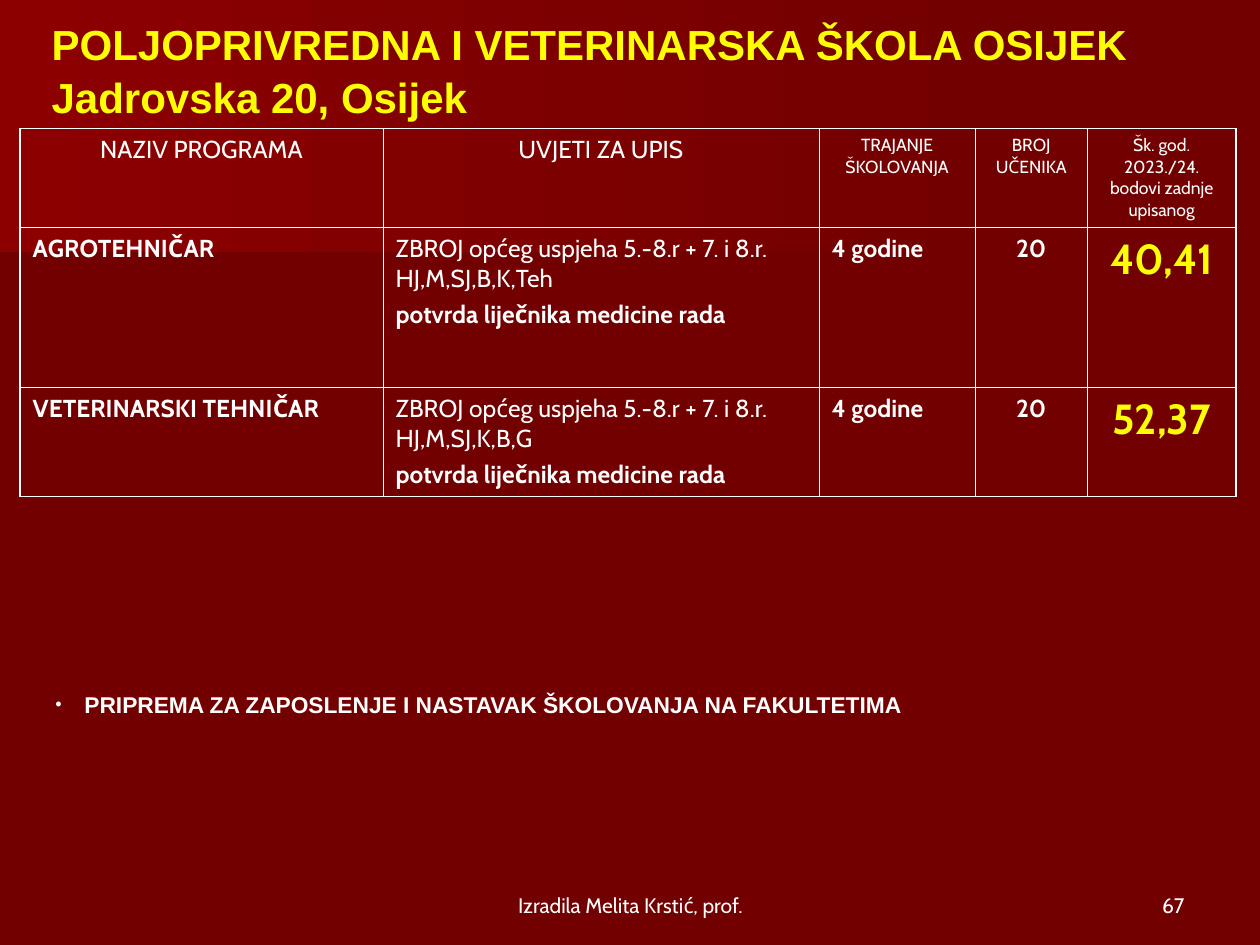
from copy import deepcopy
from dataclasses import dataclass
from typing import Any

from lxml.etree import SubElement as Sub
from pptx import Presentation
from pptx.dml.color import RGBColor as Rgb
from pptx.enum.text import MSO_ANCHOR as Anchor, MSO_AUTO_SIZE as Auto, PP_ALIGN as Align
from pptx.oxml import parse_xml
from pptx.oxml.ns import nsdecls, qn
from pptx.util import Inches, Pt

WHITE, YELLOW, DARK = "FFFFFF", "FFFF00", "720000"
COLS = [2.88, 3.46, 1.24, 0.89, 1.18]
ROWS = [0.77, 1.27, 0.85]
THIN, THICK = 0.45, 1.08


@dataclass
class Wave:
    points: list[tuple[float, float]]
    end: str


@dataclass
class Line:
    text: str
    size: float = 14
    bold: bool = False
    color: str = WHITE
    align: Align = Align.LEFT


@dataclass
class Note:
    text: str
    left: float
    width: float
    align: Align


WAVES = [
    Wave([(7.78, 1.53), (0, 2.16), (0, 1.01), (7.79, 1.01), (7.78, 1.28)], "6B0000"),
    Wave([(7.91, 1.62), (0, 2.08), (0, 0), (7.92, 0)], "8C0000"),
]
NOTES = [
    Note("Izradila Melita Krstić, prof.", 3.42, 3.17, Align.CENTER),
    Note("67", 7.17, 2.33, Align.RIGHT),
]
HEADS = [
    ("NAZIV PROGRAMA", 14),
    ("UVJETI ZA UPIS", 14),
    ("TRAJANJE ŠKOLOVANJA", 10),
    ("BROJ UČENIKA", 10),
    ("Šk. god. 2023./24. bodovi zadnje upisanog", 10),
]
COURSES = [
    ("AGROTEHNIČAR", "HJ,M,SJ,B,K,Teh", "40,41"),
    ("VETERINARSKI TEHNIČAR", "HJ,M,SJ,K,B,G", "52,37"),
]


def rgb(code: str) -> Rgb:
    return Rgb.from_string(code)


def put(para: Any, text: str, *, size: float = 14, font: str = "Cabin",
        color: str = WHITE, bold: bool = False, align: Align = Align.LEFT,
        lead: float = 1.0, before: float = 0) -> None:
    para.text = text
    para.alignment = align
    para.line_spacing = lead
    para.space_before = Pt(before)
    for run in para.runs:
        face = run.font
        face.name, face.size, face.bold = font, Pt(size), bold
        face.color.rgb = rgb(color)
    for gap in para._p.findall(qn("a:br")):
        gap.append(deepcopy(para.runs[0]._r.rPr))


def place(shape: Any, left: float, top: float, width: float, height: float,
          anchor: Anchor) -> Any:
    shape.left, shape.top = Inches(left), Inches(top)
    shape.width, shape.height = Inches(width), Inches(height)
    frame = shape.text_frame
    frame.word_wrap, frame.auto_size = True, Auto.NONE
    frame.vertical_anchor = anchor
    return frame.paragraphs[0]


def draw_wave(slide: Any, wave: Wave) -> None:
    pen = slide.shapes.build_freeform(*wave.points[0], scale=Inches(1))
    pen.add_line_segments(wave.points[1:], close=True)
    shape = pen.convert_to_shape()
    shape.shadow.inherit = False
    shape.line.fill.background()
    shape.fill.gradient()
    shape.fill.gradient_angle = 180
    for stop, code in zip(shape.fill.gradient_stops, (DARK, wave.end)):
        stop.color.rgb = rgb(code)


def add_bullet(para: Any, indent: float) -> None:
    props = para._p.get_or_add_pPr()
    props.set("marL", str(Inches(indent)))
    props.set("indent", str(-Inches(indent)))
    tint = Sub(props, qn("a:buClr"))
    Sub(tint, qn("a:srgbClr"), val=WHITE)
    Sub(props, qn("a:buSzPct"), val="80000")
    Sub(props, qn("a:buFont"), typeface="Arial")
    Sub(props, qn("a:buChar"), char="•")


def draw_edges(cell: Any, edges: dict[str, float]) -> None:
    props = cell._tc.get_or_add_tcPr()
    for spot, (side, width) in enumerate(edges.items()):
        props.insert(spot, parse_xml(
            f'<a:ln{side} {nsdecls("a")} w="{Pt(width)}"><a:solidFill>'
            f'<a:srgbClr val="{WHITE}"/></a:solidFill></a:ln{side}>'))


def fill_cell(cell: Any, lines: list[Line]) -> None:
    frame = cell.text_frame
    for spot, line in enumerate(lines):
        para = frame.add_paragraph() if spot else frame.paragraphs[0]
        put(para, line.text, size=line.size, bold=line.bold, color=line.color,
            align=line.align, lead=1.01, before=3.5 if spot else 0)


def course_row(name: str, marks: str, score: str) -> list[list[Line]]:
    return [
        [Line(name, bold=True)],
        [Line(f"ZBROJ općeg uspjeha 5.-8.r + 7. i 8.r. {marks}"),
         Line("potvrda liječnika medicine rada", bold=True)],
        [Line("4 godine", bold=True)],
        [Line("20", bold=True, align=Align.CENTER)],
        [Line(score, 24, True, YELLOW, Align.CENTER)],
    ]


def draw_table(slide: Any) -> None:
    grid = [[[Line(text, size, align=Align.CENTER)] for text, size in HEADS]]
    grid += [course_row(*course) for course in COURSES]
    table = slide.shapes.add_table(
        len(ROWS), len(COLS), Inches(0.16), Inches(1.02),
        Inches(sum(COLS)), Inches(sum(ROWS))).table
    table.first_row = table.horz_banding = False
    for col, width in zip(table.columns, COLS):
        col.width = Inches(width)
    for row, height in zip(table.rows, ROWS):
        row.height = Inches(height)
    last = len(COLS) - 1
    for y, row in enumerate(grid):
        for x, lines in enumerate(row):
            cell = table.cell(y, x)
            cell.fill.background()
            fill_cell(cell, lines)
            draw_edges(cell, {"L": THIN if x else THICK,
                              "R": THICK if x == last else THIN,
                              "T": THIN if y else THICK, "B": THIN})


def main() -> None:
    deck = Presentation()
    deck.slide_width, deck.slide_height = Inches(10), Inches(7.5)
    slide = deck.slides.add_slide(deck.slide_layouts[1])
    back = slide.background.fill
    back.solid()
    back.fore_color.rgb = rgb(DARK)
    title, body = slide.placeholders
    for wave in WAVES:
        draw_wave(slide, wave)
    for shape in (title, body):
        slide.shapes._spTree.append(shape._element)
    para = place(title, 0.31, 0.31, 9.23, 0.47, Anchor.MIDDLE)
    put(para, "POLJOPRIVREDNA I VETERINARSKA ŠKOLA OSIJEK\nJadrovska 20, Osijek",
        size=24, font="Arial", color=YELLOW, bold=True, lead=1.05)
    draw_table(slide)
    para = place(body, 0.34, 5.43, 9.45, 0.39, Anchor.TOP)
    add_bullet(para, 0.23)
    put(para, "PRIPREMA ZA ZAPOSLENJE I NASTAVAK ŠKOLOVANJA NA FAKULTETIMA",
        size=13, font="Arial", bold=True)
    for note in NOTES:
        box = slide.shapes.add_textbox(0, 0, 0, 0)
        para = place(box, note.left, 6.83, note.width, 0.5, Anchor.BOTTOM)
        put(para, note.text, size=12, align=note.align)
    deck.save("out.pptx")


if __name__ == "__main__":
    main()
